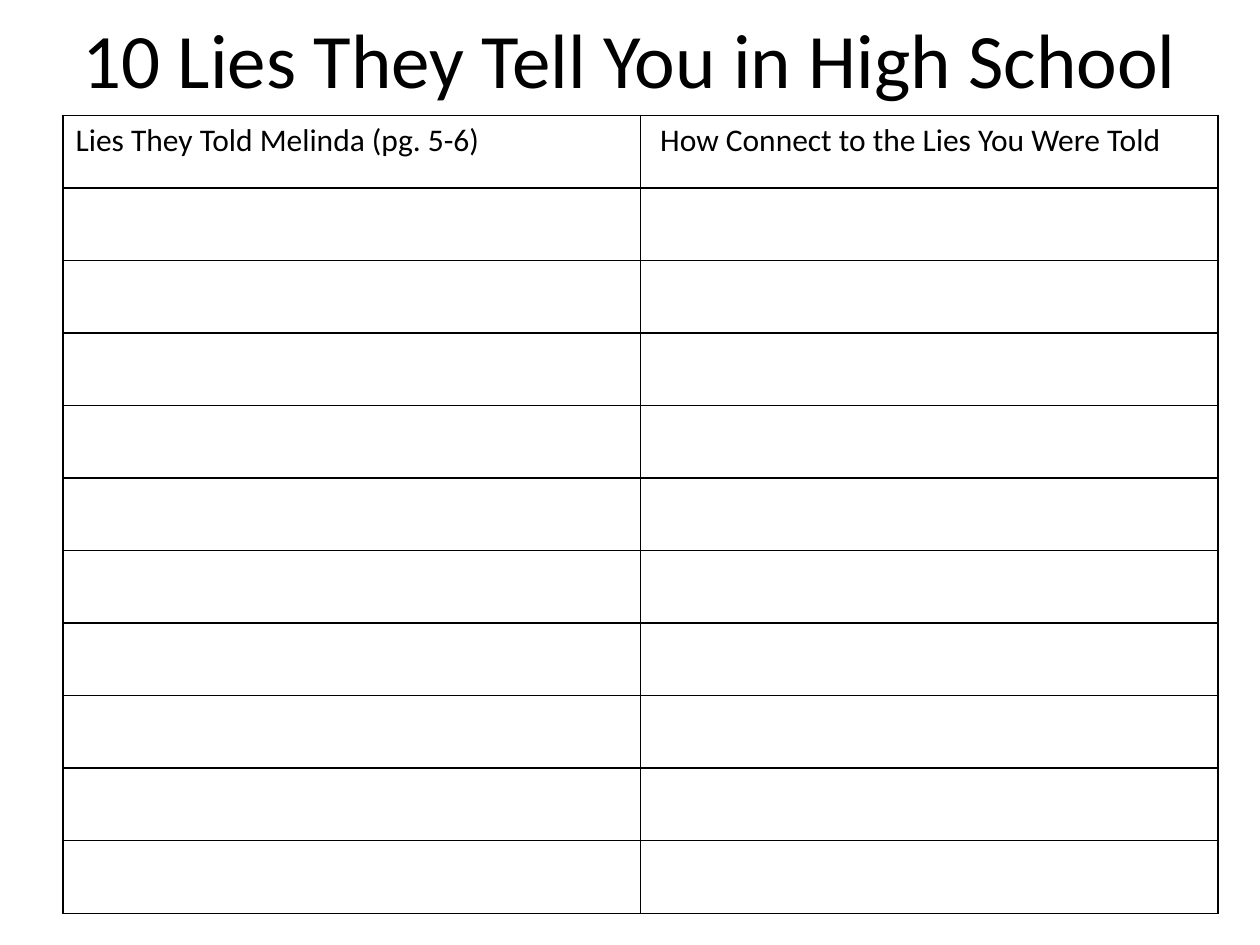
from lxml import etree
from pptx import Presentation
from pptx.dml.color import RGBColor
from pptx.enum.text import MSO_ANCHOR, PP_ALIGN
from pptx.oxml.ns import qn
from pptx.util import Pt

CENTER = PP_ALIGN.CENTER
MIDDLE = MSO_ANCHOR.MIDDLE
BLACK = RGBColor(0, 0, 0)
FONT = "Calibri"
TITLE_ONLY = 5
TITLE = "10 Lies They Tell You in High School"
HEADINGS = ("Lies They Told Melinda (pg. 5-6)", " How Connect to the Lies You Were Told")
LIES = 10


def format_font(font, size):
    """Set the typeface, size and colour of a font."""
    font.name = FONT
    font.size = Pt(size)
    font.bold = False
    font.color.rgb = BLACK


def add_borders(cell, width):
    """Draw a solid black line on all four sides of a cell."""
    properties = cell._tc.get_or_add_tcPr()
    for index, side in enumerate(("a:lnL", "a:lnR", "a:lnT", "a:lnB")):
        line = etree.Element(qn(side), w=str(Pt(width)))
        fill = etree.SubElement(line, qn("a:solidFill"))
        etree.SubElement(fill, qn("a:srgbClr"), val=str(BLACK))
        properties.insert(index, line)


def place_title(slide, left, top, width, height):
    """Fill the title placeholder and fit it to the given box."""
    title = slide.shapes.title
    title.left, title.top, title.width, title.height = map(Pt, (left, top, width, height))
    text_frame = title.text_frame
    text_frame.text = TITLE
    text_frame.vertical_anchor = MIDDLE
    paragraph = text_frame.paragraphs[0]
    paragraph.alignment = CENTER
    format_font(paragraph.runs[0].font, 44)


def place_lies_table(slide, left, top, width, height):
    """Add the worksheet table: a heading row and one empty row per lie."""
    row_count = LIES + 1
    frame = slide.shapes.add_table(row_count, len(HEADINGS), *map(Pt, (left, top, width, height)))
    table = frame.table
    table.first_row = False
    table.horz_banding = False
    for column in table.columns:
        column.width = Pt(width / len(HEADINGS))
    for row in table.rows:
        row.height = Pt(height / row_count)
    for cell in table.iter_cells():
        cell.fill.background()
        add_borders(cell, 1)
    for cell, heading in zip(table.rows[0].cells, HEADINGS):
        cell.text_frame.text = heading
        format_font(cell.text_frame.paragraphs[0].runs[0].font, 18)


def main():
    """Build the slide and save the presentation."""
    presentation = Presentation()
    presentation.slide_width = Pt(720)
    presentation.slide_height = Pt(540)
    slide = presentation.slides.add_slide(presentation.slide_layouts[TITLE_ONLY])
    place_title(slide, 36, 0, 648, 66)
    place_lies_table(slide, 36, 66, 660, 456)
    presentation.save("out.pptx")


if __name__ == "__main__":
    main()
